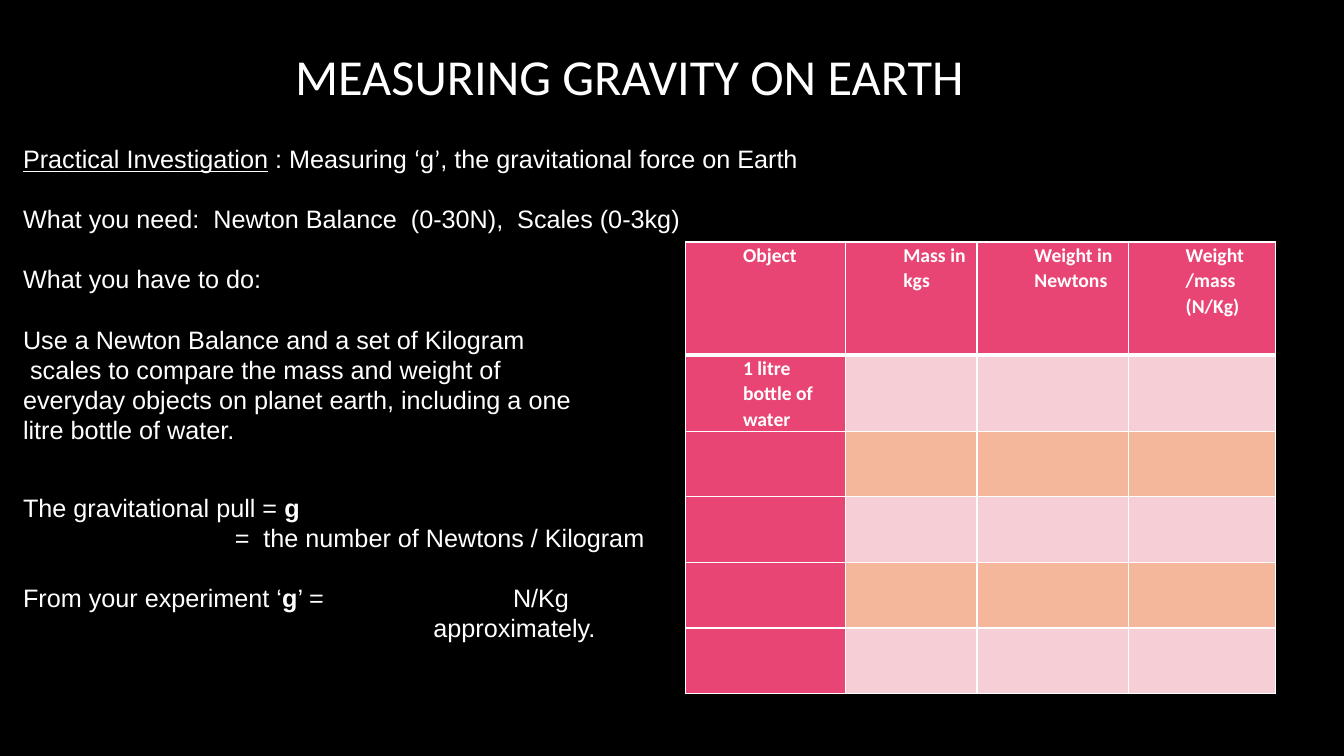
"""Build the slide on measuring gravity on Earth."""
from dataclasses import dataclass

from pptx import Presentation
from pptx.dml.color import RGBColor
from pptx.enum.text import MSO_ANCHOR, PP_ALIGN
from pptx.oxml.ns import qn
from pptx.util import Inches, Pt
from lxml.etree import SubElement


@dataclass(frozen=True)
class Theme:
    background: str = "000000"
    text: str = "FFFFFF"
    header: str = "E84574"
    bands: tuple = ("F6CFD6", "F5B79C")
    heading_font: str = "Calibri"
    body_font: str = "Arial"
    title_size: float = 36
    body_size: float = 18
    table_size: float = 14
    line_pitch: float = 21.5
    thin_border: float = 1
    thick_border: float = 3


THEME = Theme()
TITLE = "MEASURING GRAVITY ON EARTH"
GAP = THEME.line_pitch
WIDE_GAP = 34.2
ANSWER_END = 4.86

# (space before, left indent, [(text, style)])
INSTRUCTIONS = [
    (0, 0, [("Practical Investigation", "underline"), (" : Measuring ", ""), ("‘", "heading"),
            ("g", ""), ("’", "heading"), (", the gravitational force on Earth", "")]),
    (GAP, 0, [("What you need:  Newton Balance  (0-30N),  Scales (0-3kg)", "")]),
    (GAP, 0, [("What you have to do:", "")]),
    (GAP, 0, [("Use a Newton Balance and a set of Kilogram", "")]),
    (0, 0.07, [("scales to compare the mass and weight of", "")]),
    (0, 0, [("everyday objects on planet earth, including a one", "")]),
    (0, 0, [("litre bottle of water.", "")]),
    (WIDE_GAP, 0, [("The gravitational pull = ", ""), ("g", "bold")]),
    (0, 2.1, [("=  the number of Newtons / Kilogram", "")]),
    (GAP, 0, [("From your experiment ‘", ""), ("g", "bold"), ("’ = ", ""),
              ("\t", "underline"), ("N/Kg", "")]),
    (0, 4.07, [("approximately.", "")]),
]
RESULTS = [
    ["Object", "Mass in kgs", "Weight in Newtons", "Weight\n/mass (N/Kg)"],
    ["1 litre bottle of water", "", "", ""],
] + [[""] * 4 for _ in range(4)]
COLUMN_WIDTHS = [1.59, 1.3, 1.5, 1.46]
ROW_HEIGHTS = [1.12, 0.76] + [0.65] * 4


def style_span(span, font, size, bold=False):
    span.font.name = font
    span.font.size = Pt(size)
    span.font.bold = bold
    span.font.color.rgb = RGBColor.from_string(THEME.text)


def add_box(page, left, top, width, height):
    box = page.shapes.add_textbox(Inches(left), Inches(top), Inches(width), Inches(height))
    box.text_frame.word_wrap = True
    box.text_frame.vertical_anchor = MSO_ANCHOR.MIDDLE
    return box.text_frame


def indent(para, inches):
    para._p.get_or_add_pPr().set("marL", str(Inches(inches)))


def add_title(page):
    frame = add_box(page, 0.66, 0.17, 11.17, 1.16)
    frame.text = TITLE
    frame.paragraphs[0].alignment = PP_ALIGN.CENTER
    style_span(frame.paragraphs[0].runs[0], THEME.heading_font, THEME.title_size)


def add_instructions(page):
    frame = add_box(page, 0.13, 1.34, 12.22, 5.12)
    for number, (gap, left, pieces) in enumerate(INSTRUCTIONS):
        para = frame.add_paragraph() if number else frame.paragraphs[0]
        para.line_spacing = Pt(THEME.line_pitch)
        para.space_before = Pt(gap)
        indent(para, left)
        if any(text == "\t" for text, _ in pieces):
            stops = SubElement(para._p.get_or_add_pPr(), qn("a:tabLst"))
            SubElement(stops, qn("a:tab"), pos=str(Inches(ANSWER_END)), algn="l")
        for text, style in pieces:
            span = para.add_run()
            span.text = text
            font = THEME.heading_font if style == "heading" else THEME.body_font
            style_span(span, font, THEME.body_size, style == "bold")
            span.font.underline = style == "underline"


def set_borders(cell, row):
    properties = cell._tc.get_or_add_tcPr()
    thick_side = {0: "lnB", 1: "lnT"}.get(row)
    for position, side in enumerate(("lnL", "lnR", "lnT", "lnB")):
        weight = THEME.thick_border if side == thick_side else THEME.thin_border
        line = SubElement(properties, qn(f"a:{side}"), w=str(Pt(weight)))
        fill = SubElement(line, qn("a:solidFill"))
        SubElement(fill, qn("a:srgbClr"), val=THEME.text)
        properties.insert(position, line)


def add_results(page):
    table = page.shapes.add_table(
        len(RESULTS), len(COLUMN_WIDTHS), Inches(6.8), Inches(2.4),
        Inches(sum(COLUMN_WIDTHS)), Inches(sum(ROW_HEIGHTS))).table
    for column, width in zip(table.columns, COLUMN_WIDTHS):
        column.width = Inches(width)
    for row, (values, height) in enumerate(zip(RESULTS, ROW_HEIGHTS)):
        table.rows[row].height = Inches(height)
        for column, value in enumerate(values):
            cell = table.cell(row, column)
            cell.margin_left = cell.margin_right = Inches(0.07)
            cell.margin_top = cell.margin_bottom = 0
            is_header = row == 0 or column == 0
            colour = THEME.header if is_header else THEME.bands[(row - 1) % 2]
            cell.fill.solid()
            cell.fill.fore_color.rgb = RGBColor.from_string(colour)
            set_borders(cell, row)
            cell.text_frame.text = value
            for para in cell.text_frame.paragraphs:
                para.line_spacing = 1.07
                indent(para, 0.5)
                for span in para.runs:
                    style_span(span, THEME.heading_font, THEME.table_size, True)


def main():
    deck = Presentation()
    deck.slide_width, deck.slide_height = Inches(13.33), Inches(7.5)
    page = deck.slides.add_slide(deck.slide_layouts[6])
    page.background.fill.solid()
    page.background.fill.fore_color.rgb = RGBColor.from_string(THEME.background)
    add_title(page)
    add_results(page)
    add_instructions(page)
    deck.save("out.pptx")


if __name__ == "__main__":
    main()
